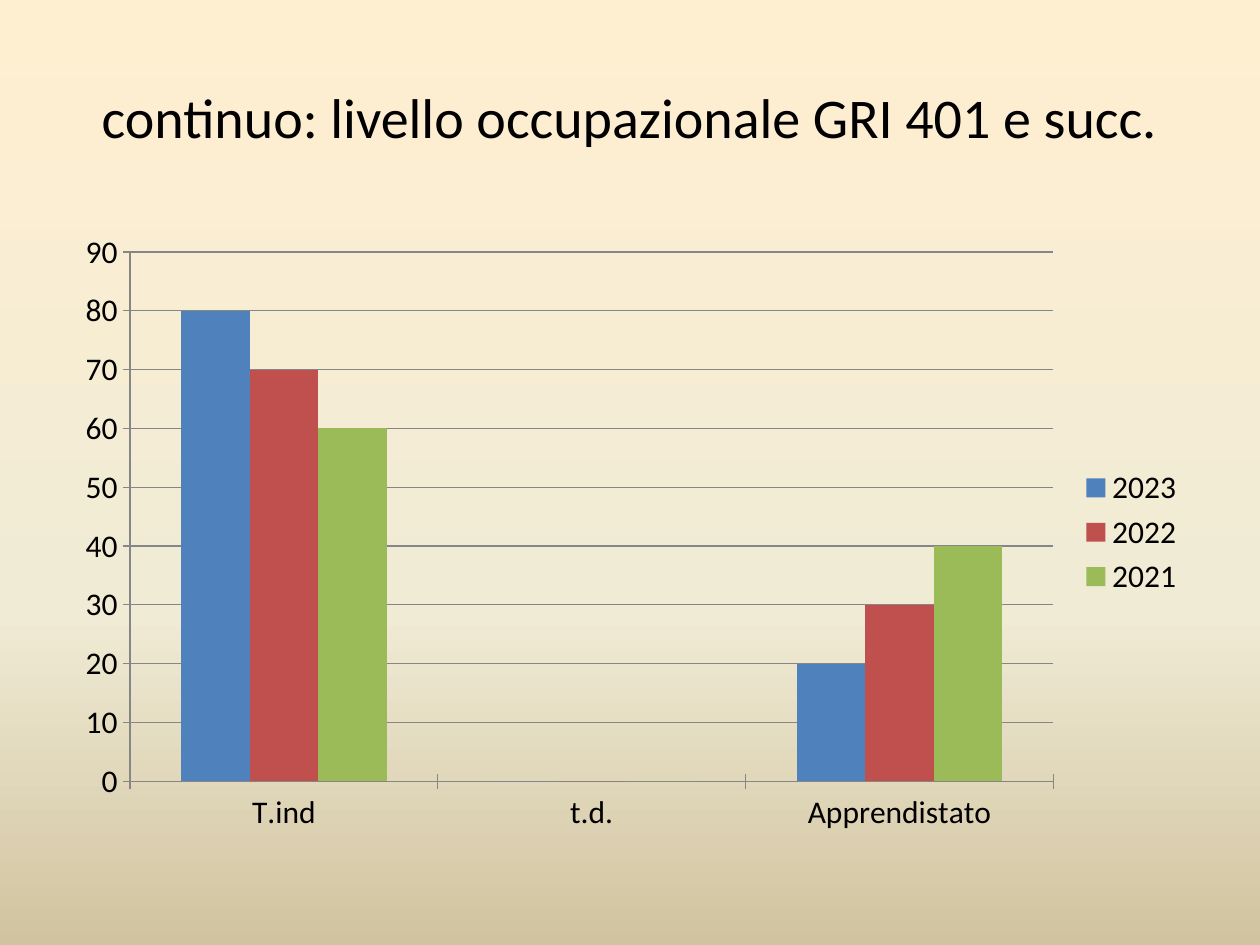
"""Build a slide with a clustered column chart of employment levels by contract type."""
import copy

import pptx
import pptx.chart.data
import pptx.dml.color
import pptx.enum.chart
import pptx.enum.text
import pptx.oxml.ns
import pptx.util

RGBColor = pptx.dml.color.RGBColor
Inches = pptx.util.Inches

FONT = "Calibri"
BLACK = RGBColor(0x00, 0x00, 0x00)
AXIS_GRAY = RGBColor(0x86, 0x86, 0x86)
GRADIENT = [
    (0, RGBColor(0xFF, 0xEF, 0xD1)),
    (0.65, RGBColor(0xF0, 0xEB, 0xD5)),
    (1, RGBColor(0xD1, 0xC3, 0x9F)),
]
CATEGORIES = ["T.ind", "t.d.", "Apprendistato"]
SERIES = [
    ("2023", [80, 0, 20], RGBColor(0x4F, 0x81, 0xBD)),
    ("2022", [70, 0, 30], RGBColor(0xC0, 0x50, 0x4D)),
    ("2021", [60, 0, 40], RGBColor(0x9B, 0xBB, 0x59)),
]


def set_gradient_background(slide, stops):
    fill = slide.background.fill
    fill.gradient()
    fill.gradient_angle = 270
    stop_list = next(slide.element.iter(pptx.oxml.ns.qn("a:gsLst")))
    while len(stop_list) < len(stops):
        stop_list.append(copy.deepcopy(stop_list[-1]))
    for gradient_stop, (position, color) in zip(fill.gradient_stops, stops):
        gradient_stop.position = position
        gradient_stop.color.rgb = color


def format_font(font, size, color=BLACK):
    font.name = FONT
    font.size = pptx.util.Pt(size)
    font.color.rgb = color


def add_text(slide, text, left, top, width, height, size=18,
             alignment=pptx.enum.text.PP_ALIGN.CENTER):
    shape = slide.shapes.add_textbox(
        Inches(left), Inches(top), Inches(width), Inches(height))
    frame = shape.text_frame
    frame.word_wrap = True
    frame.vertical_anchor = pptx.enum.text.MSO_ANCHOR.MIDDLE
    paragraph = frame.paragraphs[0]
    paragraph.alignment = alignment
    run = paragraph.add_run()
    run.text = text
    format_font(run.font, size)


def format_axis(axis):
    axis.major_tick_mark = pptx.enum.chart.XL_TICK_MARK.CROSS
    axis.format.line.color.rgb = AXIS_GRAY


def add_column_chart(slide, left, top, width, height):
    chart_data = pptx.chart.data.CategoryChartData()
    chart_data.categories = CATEGORIES
    for name, values, _ in SERIES:
        chart_data.add_series(name, values)
    chart = slide.shapes.add_chart(
        pptx.enum.chart.XL_CHART_TYPE.COLUMN_CLUSTERED,
        Inches(left), Inches(top), Inches(width), Inches(height), chart_data).chart
    format_font(chart.font, 18)
    chart.has_title = False
    chart.has_legend = True
    chart.legend.position = pptx.enum.chart.XL_LEGEND_POSITION.RIGHT
    chart.legend.include_in_layout = False

    plot = chart.plots[0]
    plot.gap_width = 150
    plot.vary_by_categories = False
    for series, (_, _, color) in zip(plot.series, SERIES):
        series.format.fill.solid()
        series.format.fill.fore_color.rgb = color

    format_axis(chart.category_axis)
    format_axis(chart.value_axis)
    chart.value_axis.has_major_gridlines = True
    chart.value_axis.major_gridlines.format.line.color.rgb = AXIS_GRAY


def main():
    presentation = pptx.Presentation()
    presentation.slide_width = Inches(10)
    presentation.slide_height = Inches(7.5)
    slide = presentation.slides.add_slide(presentation.slide_layouts[6])
    set_gradient_background(slide, GRADIENT)
    add_text(slide, "continuo: livello occupazionale GRI 401 e succ.",
             0.5, 0.3, 9, 1.25, size=32)
    add_column_chart(slide, 0.5, 1.75, 9, 4.95)
    presentation.save("out.pptx")


if __name__ == "__main__":
    main()
